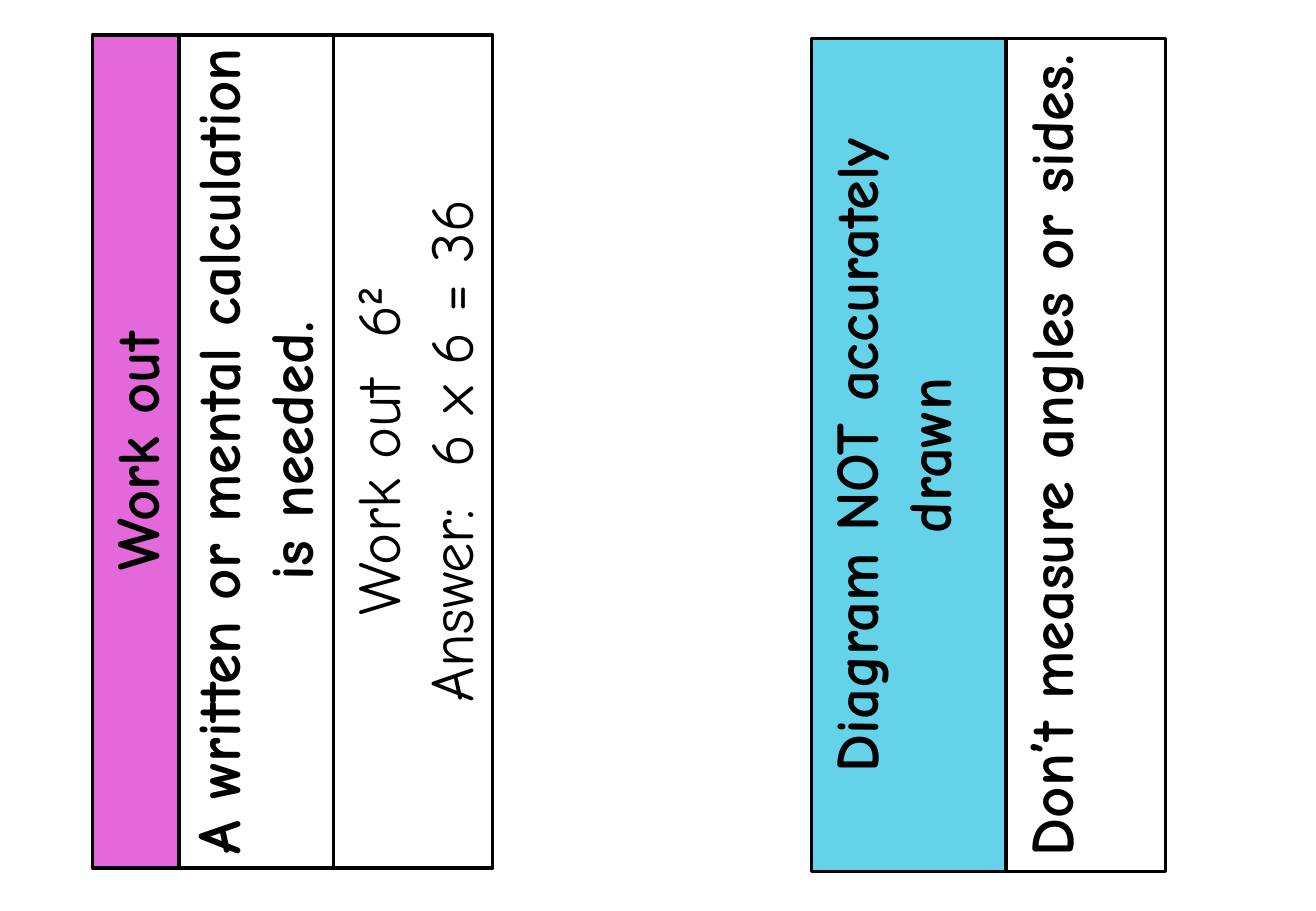
from pptx import Presentation
from pptx.dml.color import RGBColor
from pptx.enum.shapes import MSO_SHAPE
from pptx.enum.text import MSO_ANCHOR, MSO_AUTO_SIZE, PP_ALIGN
from pptx.util import Cm, Pt

RECT = MSO_SHAPE.RECTANGLE
TOP = MSO_ANCHOR.TOP
GROW = MSO_AUTO_SIZE.SHAPE_TO_FIT_TEXT
CENTER = PP_ALIGN.CENTER
BLACK = RGBColor(0x00, 0x00, 0x00)
WHITE = RGBColor(0xFF, 0xFF, 0xFF)
PINK = RGBColor(0xE3, 0x69, 0xDA)
CYAN = RGBColor(0x64, 0xD2, 0xE8)


class Cards:
    """Draws vocabulary cards turned a quarter to the left on one slide."""

    font = "Comic Neue"
    size = Pt(36)
    length = 17.42

    def __init__(self, slide):
        self.s = slide

    def card(self, middle, panels):
        group = self.s.shapes.add_group_shape()
        for left, depth, fill, lines in panels:
            self.panel(group, middle, left, depth, fill, lines)

    def panel(self, group, middle, left, depth, fill, lines):
        sp = group.shapes.add_shape(
            RECT, Cm(left + depth / 2 - self.length / 2), Cm(middle - depth / 2),
            Cm(self.length), Cm(depth))
        sp.rotation = 270
        sp.shadow.inherit = False
        sp.fill.solid()
        sp.fill.fore_color.rgb = fill
        sp.line.color.rgb = BLACK
        sp.line.width = Pt(2)
        tf = sp.text_frame
        tf.word_wrap = True
        tf.auto_size = GROW
        tf.vertical_anchor = TOP
        for i, runs in enumerate(lines):
            p = tf.add_paragraph() if i else tf.paragraphs[0]
            p.alignment = CENTER
            for text, bold, raised in runs:
                self.run(p, text, bold, raised)

    def run(self, p, text, bold, raised):
        r = p.add_run()
        r.text = text
        r.font.name = self.font
        r.font.size = self.size
        r.font.bold = bold
        r.font.color.rgb = BLACK
        if raised:
            r._r.get_or_add_rPr().set("baseline", "30000")


def main():
    prs = Presentation()
    prs.slide_width, prs.slide_height = Cm(27.51), Cm(19.05)
    cards = Cards(prs.slides.add_slide(prs.slide_layouts[6]))
    cards.card(9.44, [
        (3.64, 3.33, WHITE,
         [[("A written or mental calculation is needed.", True, False)]]),
        (1.94, 1.8, PINK, [[("Work out", True, False)]]),
        (6.97, 3.33, WHITE,
         [[("Work out  6", False, False), ("2", True, True)],
          [("Answer:  6 x 6 = 36", False, False)]]),
    ])
    cards.card(9.52, [
        (16.97, 4.06, CYAN, [[("Diagram NOT accurately drawn", True, False)]]),
        (21.04, 3.33, WHITE, [[("Don’t measure angles or sides.", True, False)]]),
    ])
    prs.save("out.pptx")


if __name__ == "__main__":
    main()
